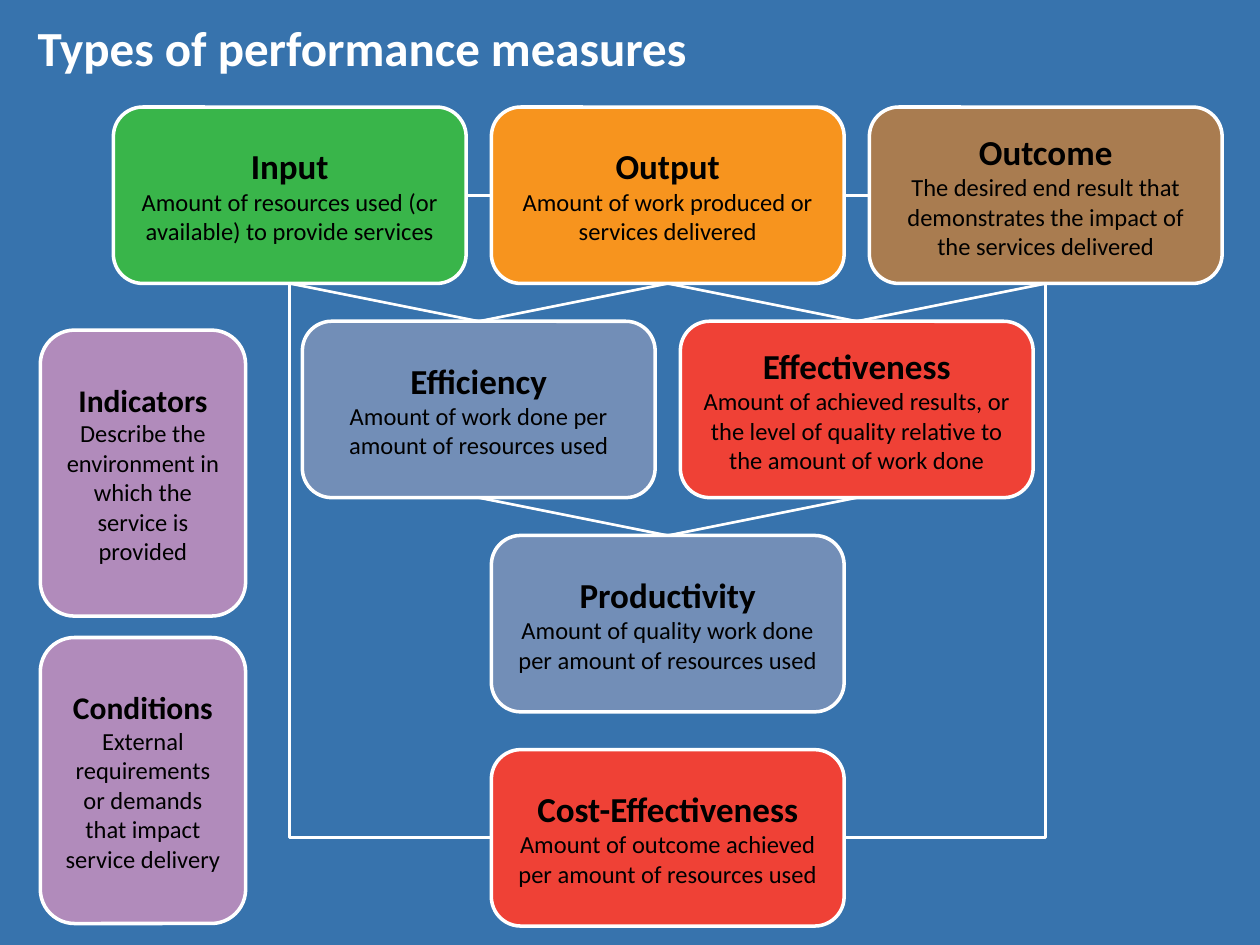
from dataclasses import dataclass

from lxml import etree
from pptx import Presentation
from pptx.dml.color import RGBColor
from pptx.enum.shapes import MSO_CONNECTOR, MSO_SHAPE
from pptx.enum.text import MSO_ANCHOR, PP_ALIGN
from pptx.oxml.ns import qn
from pptx.util import Inches, Pt

ROUND = MSO_SHAPE.ROUNDED_RECTANGLE
STRAIGHT, ELBOW = MSO_CONNECTOR.STRAIGHT, MSO_CONNECTOR.ELBOW
MIDDLE, CENTER = MSO_ANCHOR.MIDDLE, PP_ALIGN.CENTER
TOP, LEFT, BOTTOM, RIGHT = range(4)  # connection sites of a box

FONT = "Calibri"
WHITE, BLACK, BLUE = "FFFFFF", "000000", "3773AD"
GREEN, ORANGE, BROWN = "39B54A", "F7941E", "A97C50"
SLATE, RED, MAUVE = "728EB7", "EF4136", "B18BBB"


@dataclass
class Grid:
    """Equal cells, in inches; a column or row may be fractional."""
    left: float
    top: float
    width: float
    height: float
    dx: float
    dy: float


@dataclass
class Box:
    name: str
    text: str
    fill: str
    col: float
    row: float


@dataclass
class Link:
    start: str
    out: int
    end: str
    into: int
    kind: int = STRAIGHT


MAIN = Grid(0.9, 0.85, 2.8, 1.4, 3, 1.7)
SIDE = Grid(0.32, 2.62, 1.63, 2.27, 0, 2.44)

MEASURES = [
    Box("Input", "Amount of resources used (or available) to provide services", GREEN, 0, 0),
    Box("Output", "Amount of work produced or services delivered", ORANGE, 1, 0),
    Box("Outcome", "The desired end result that demonstrates the impact of the services delivered",
        BROWN, 2, 0),
    Box("Efficiency", "Amount of work done per amount of resources used", SLATE, 0.5, 1),
    Box("Productivity", "Amount of quality work done per amount of resources used", SLATE, 1, 2),
    Box("Effectiveness", "Amount of achieved results, or the level of quality relative to "
        "the amount of work done", RED, 1.5, 1),
    Box("Cost-Effectiveness", "Amount of outcome achieved per amount of resources used",
        RED, 1, 3),
]
FACTORS = [
    Box("Indicators", "Describe the environment in which the service is provided", MAUVE, 0, 0),
    Box("Conditions", "External requirements or demands that impact service delivery",
        MAUVE, 0, 1),
]
LINKS = [
    Link("Input", BOTTOM, "Efficiency", TOP),
    Link("Efficiency", TOP, "Output", BOTTOM),
    Link("Output", BOTTOM, "Effectiveness", TOP),
    Link("Effectiveness", TOP, "Outcome", BOTTOM),
    Link("Efficiency", BOTTOM, "Productivity", TOP),
    Link("Productivity", TOP, "Effectiveness", BOTTOM),
    Link("Cost-Effectiveness", RIGHT, "Outcome", BOTTOM, ELBOW),
    Link("Cost-Effectiveness", LEFT, "Input", BOTTOM, ELBOW),
    Link("Input", RIGHT, "Output", LEFT),
    Link("Output", RIGHT, "Outcome", LEFT),
]


def paint(color, value: str) -> None:
    """Set a fill, line or font colour from a hex string."""
    color.rgb = RGBColor.from_string(value)


def style(par, size: float, color: str, bold: bool) -> None:
    par.font.name, par.font.size, par.font.bold = FONT, Pt(size), bold
    paint(par.font.color, color)


def draw_box(shapes, box: Box, grid: Grid, size: float):
    shape = shapes.add_shape(
        ROUND, Inches(grid.left + box.col * grid.dx), Inches(grid.top + box.row * grid.dy),
        Inches(grid.width), Inches(grid.height))
    shape.shadow.inherit = False
    shape.fill.solid()
    paint(shape.fill.fore_color, box.fill)
    paint(shape.line.color, WHITE)
    shape.line.width = Pt(2)
    frame = shape.text_frame
    frame.word_wrap, frame.vertical_anchor = True, MIDDLE
    head, body = frame.paragraphs[0], frame.add_paragraph()
    head.text, body.text = box.name, box.text
    style(head, size, BLACK, True)
    style(body, 14, BLACK, False)
    head.alignment = body.alignment = CENTER
    return shape


def draw_link(shapes, link: Link, boxes: dict) -> None:
    line = shapes.add_connector(link.kind, 0, 0, 0, 0)
    line.begin_connect(boxes[link.start], link.out)
    line.end_connect(boxes[link.end], link.into)
    paint(line.line.color, WHITE)
    line.line.width = Pt(1.5)
    props = line._element.spPr
    etree.SubElement(props, qn("a:effectLst"))
    if link.kind == ELBOW:  # a single corner
        props.find(qn("a:prstGeom")).set("prst", "bentConnector2")


def draw_title(shapes, text: str) -> None:
    frame = shapes.add_textbox(Inches(0.2), 0, Inches(9), Inches(0.75)).text_frame
    frame.word_wrap, frame.vertical_anchor = True, MIDDLE
    frame.text = text
    style(frame.paragraphs[0], 28, WHITE, True)


def main() -> None:
    deck = Presentation()
    deck.slide_width, deck.slide_height = Inches(10), Inches(7.5)
    slide = deck.slides.add_slide(deck.slide_layouts[6])
    slide.background.fill.solid()
    paint(slide.background.fill.fore_color, BLUE)
    shapes = slide.shapes

    # Measures, title and the lines between measures
    boxes = {box.name: draw_box(shapes, box, MAIN, 20) for box in MEASURES}
    draw_title(shapes, "Types of performance measures")
    for link in LINKS:
        draw_link(shapes, link, boxes)

    # Outside factors
    for box in FACTORS:
        draw_box(shapes, box, SIDE, 18)

    deck.save("out.pptx")


if __name__ == "__main__":
    main()
